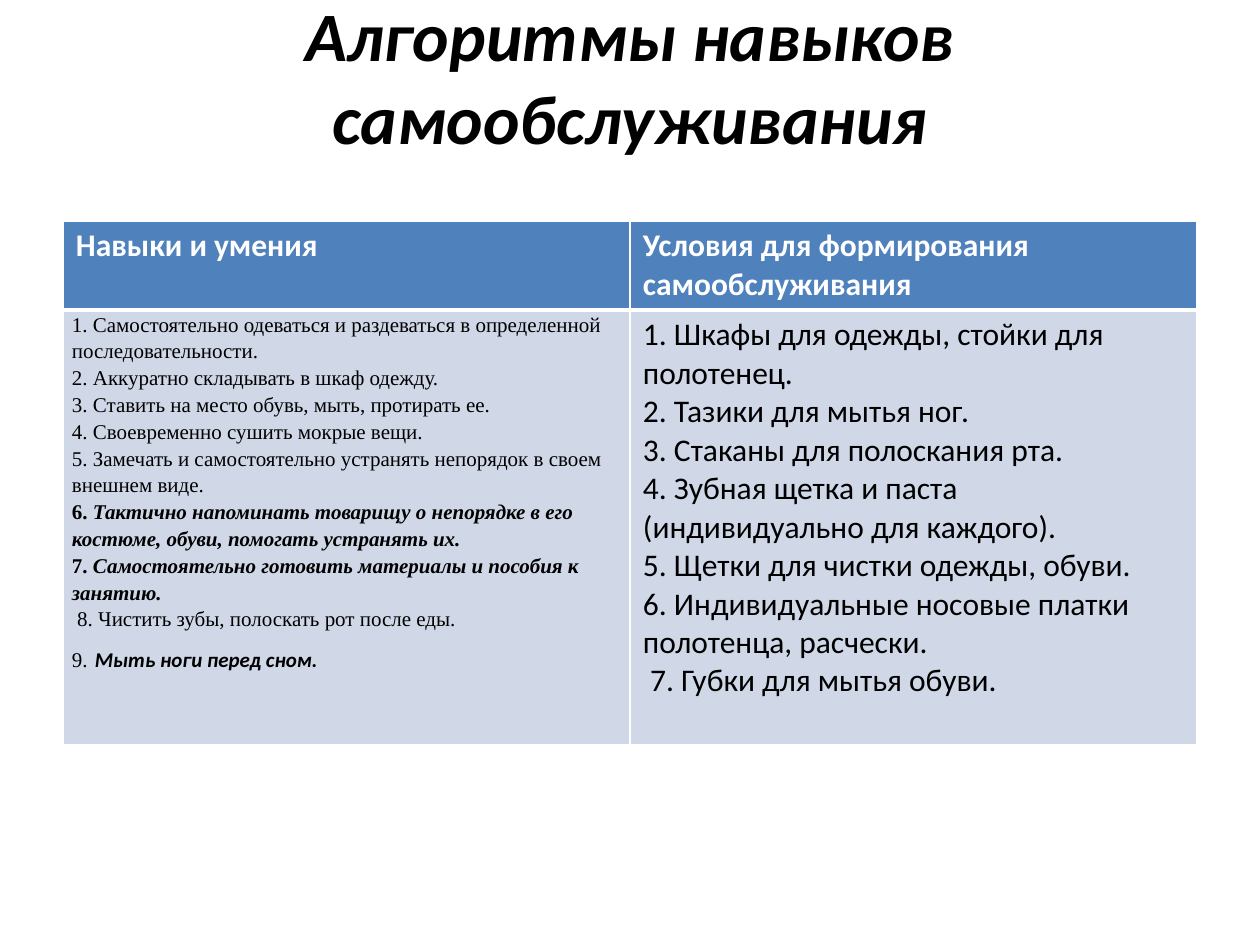
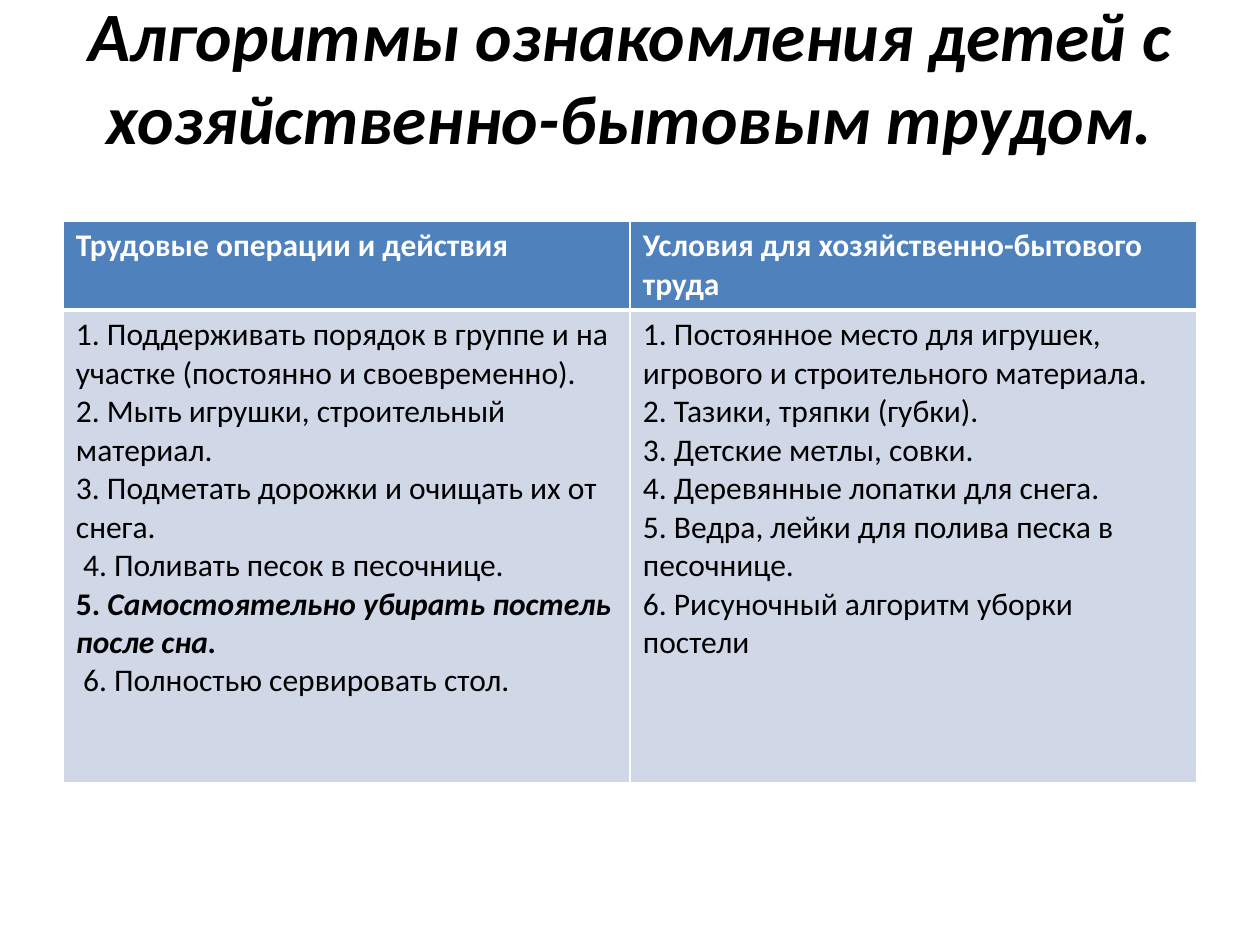
from dataclasses import dataclass

from lxml import etree
from pptx import Presentation
from pptx.dml.color import RGBColor
from pptx.enum.text import MSO_ANCHOR, MSO_AUTO_SIZE, PP_ALIGN
from pptx.oxml.ns import qn
from pptx.util import Emu, Pt

CENTER = PP_ALIGN.CENTER
MIDDLE = MSO_ANCHOR.MIDDLE
NO_AUTOFIT = MSO_AUTO_SIZE.NONE
TITLE_ONLY = 5
PX_PER_INCH = 126


@dataclass(frozen=True)
class Theme:
    text: str = "000000"
    header_text: str = "FFFFFF"
    header_fill: str = "4F81BD"
    body_fill: str = "D0D8E8"
    border: str = "FFFFFF"
    sans: str = "Calibri"
    serif: str = "Times New Roman"
    title_size: float = 39.6
    table_size: int = 18
    dense_size: int = 12
    thin: int = 1
    thick: int = 3


@dataclass(frozen=True)
class ListStyle:
    font: str
    size: int
    spacing: float
    side_margin: int
    top_margin: int


THEME = Theme()
REGULAR = ListStyle(THEME.sans, THEME.table_size, 1.0, 13, 6)
DENSE = ListStyle(THEME.serif, THEME.dense_size, 1.15, 9, 0)

TITLE_BOX = (63, 38, 1134, 158)
TITLE_BOTTOM_MARGIN = 90
TABLE_LEFT, TABLE_TOP, TABLE_WIDTH = 63, 221, 1134
HEADER_HEIGHT = 89

# A list item is a string, or runs of (text, bold, italic[, font, size]).
SELF_CARE_SKILLS = [
    "1. Самостоятельно одеваться и раздеваться в определенной последовательности.",
    "2. Аккуратно складывать в шкаф одежду.",
    "3. Ставить на место обувь, мыть, протирать ее.",
    "4. Своевременно сушить мокрые вещи.",
    "5. Замечать и самостоятельно устранять непорядок в своем внешнем виде.",
    [("6. ", True, False),
     ("Тактично напоминать товарищу о непорядке в его костюме, обуви, "
      "помогать устранять их.", True, True)],
    [("7. ", True, False),
     ("Самостоятельно готовить материалы и пособия к занятию.", True, True)],
    " 8. Чистить зубы, полоскать рот после еды.",
    [("9.", False, False),
     (" ", True, True, THEME.sans, THEME.table_size),
     ("Мыть ноги перед сном.", True, True, THEME.sans, THEME.dense_size)],
]
SELF_CARE_CONDITIONS = [
    "1. Шкафы для одежды, стойки для полотенец.",
    "2. Тазики для мытья ног.",
    "3. Стаканы для полоскания рта.",
    "4. Зубная щетка и паста (индивидуально для каждого).",
    "5. Щетки для чистки одежды, обуви.",
    "6. Индивидуальные носовые платки полотенца, расчески.",
    " 7. Губки для мытья обуви.",
]
CHORES = [
    "1. Поддерживать порядок в группе и на участке (постоянно и своевременно).",
    "2. Мыть игрушки, строительный материал.",
    "3. Подметать дорожки и очищать их от снега.",
    " 4. Поливать песок в песочнице.",
    [("5. ", True, False),
     ("Самостоятельно убирать постель после сна.", True, True)],
    " 6. Полностью сервировать стол.",
]
CHORE_CONDITIONS = [
    "1. Постоянное место для игрушек, игрового и строительного материала.",
    "2. Тазики, тряпки (губки).",
    "3. Детские метлы, совки.",
    "4. Деревянные лопатки для снега.",
    "5. Ведра, лейки для полива песка в песочнице.",
    "6. Рисуночный алгоритм уборки постели",
]

# Title, body row height, columns of (heading, items, list style).
SLIDES = [
    ("Алгоритмы навыков самообслуживания", 435, [
        ("Навыки и умения", SELF_CARE_SKILLS, DENSE),
        ("Условия для формирования самообслуживания",
         SELF_CARE_CONDITIONS, REGULAR),
    ]),
    ("Алгоритмы ознакомления детей с хозяйственно-бытовым трудом.", 473, [
        ("Трудовые операции и действия", CHORES, REGULAR),
        ("Условия для хозяйственно-бытового труда",
         CHORE_CONDITIONS, REGULAR),
    ]),
]


def px(length):
    return Emu(round(length * 914400 / PX_PER_INCH))


def set_font(font, name, size, color, bold=False, italic=False):
    font.name, font.size = name, Pt(size)
    font.bold, font.italic = bold, italic
    font.color.rgb = RGBColor.from_string(color)


def add_title(slide, text, box):
    title = slide.shapes.title
    title.left, title.top, title.width, title.height = map(px, box)
    frame = title.text_frame
    frame.text = text
    frame.word_wrap = True
    frame.auto_size = NO_AUTOFIT
    frame.vertical_anchor = MIDDLE
    frame.margin_bottom = px(TITLE_BOTTOM_MARGIN)
    paragraph = frame.paragraphs[0]
    paragraph.alignment = CENTER
    set_font(paragraph.font, THEME.sans, THEME.title_size, THEME.text, True, True)


def set_borders(cell, top, bottom):
    """Draw the four borders; side borders are thin."""
    properties = cell._tc.get_or_add_tcPr()
    widths = {"a:lnL": THEME.thin, "a:lnR": THEME.thin,
              "a:lnT": top, "a:lnB": bottom}
    for index, (tag, width) in enumerate(widths.items()):
        line = etree.Element(qn(tag), w=str(Pt(width)))
        fill = etree.SubElement(line, qn("a:solidFill"))
        etree.SubElement(fill, qn("a:srgbClr"), val=THEME.border)
        properties.insert(index, line)


def format_cell(cell, fill, style, top, bottom):
    cell.fill.solid()
    cell.fill.fore_color.rgb = RGBColor.from_string(fill)
    cell.margin_left = cell.margin_right = px(style.side_margin)
    cell.margin_top = cell.margin_bottom = px(style.top_margin)
    set_borders(cell, top, bottom)


def fill_header(cell, heading):
    format_cell(cell, THEME.header_fill, REGULAR, THEME.thin, THEME.thick)
    cell.text = heading
    set_font(cell.text_frame.paragraphs[0].font, THEME.sans, THEME.table_size,
             THEME.header_text, True)


def fill_list(cell, items, style):
    format_cell(cell, THEME.body_fill, style, THEME.thick, THEME.thin)
    frame = cell.text_frame
    for index, item in enumerate(items):
        paragraph = frame.add_paragraph() if index else frame.paragraphs[0]
        paragraph.line_spacing = style.spacing
        if isinstance(item, str):
            paragraph.text = item
            set_font(paragraph.font, style.font, style.size, THEME.text)
            continue
        for text, bold, italic, *typeface in item:
            run = paragraph.add_run()
            run.text = text
            name, size = typeface or (style.font, style.size)
            set_font(run.font, name, size, THEME.text, bold, italic)


def add_skills_table(slide, columns, box):
    left, top, width, height = box
    table = slide.shapes.add_table(2, len(columns), *map(px, box)).table
    table.horz_banding = False
    table.rows[0].height = px(HEADER_HEIGHT)
    table.rows[1].height = px(height - HEADER_HEIGHT)
    for index, (heading, items, style) in enumerate(columns):
        table.columns[index].width = px(width / len(columns))
        fill_header(table.cell(0, index), heading)
        fill_list(table.cell(1, index), items, style)


def add_algorithm_slide(deck, title, body_height, columns):
    slide = deck.slides.add_slide(deck.slide_layouts[TITLE_ONLY])
    add_title(slide, title, TITLE_BOX)
    add_skills_table(slide, columns, (TABLE_LEFT, TABLE_TOP, TABLE_WIDTH,
                                      HEADER_HEIGHT + body_height))


def main():
    deck = Presentation()
    deck.slide_width, deck.slide_height = px(1260), px(945)
    for title, body_height, columns in SLIDES:
        add_algorithm_slide(deck, title, body_height, columns)
    deck.save("out.pptx")


if __name__ == "__main__":
    main()
